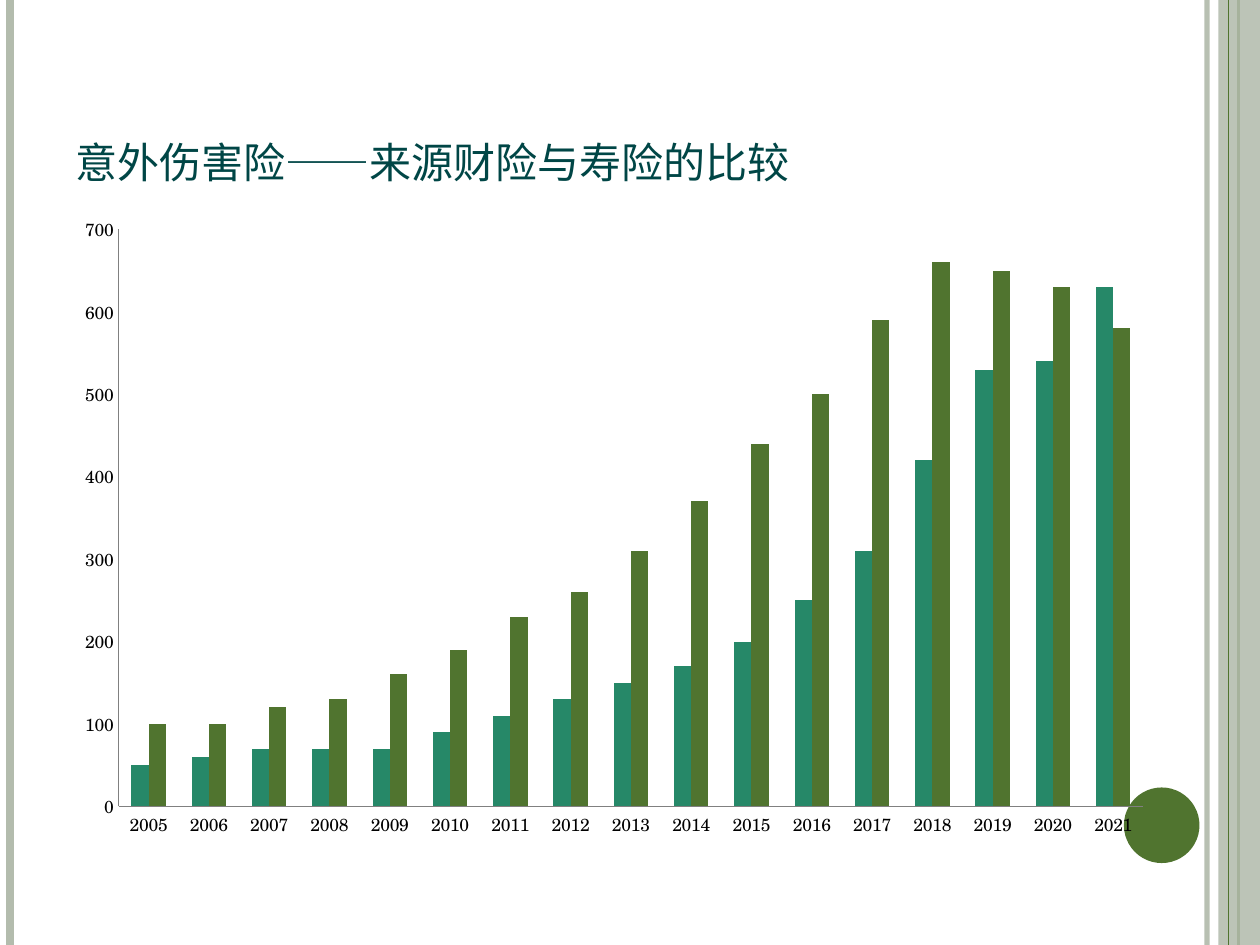
from dataclasses import dataclass

from lxml.etree import SubElement
from pptx import Presentation
from pptx.chart.data import CategoryChartData
from pptx.dml.color import RGBColor
from pptx.enum.chart import XL_CHART_TYPE, XL_TICK_MARK
from pptx.enum.shapes import MSO_CONNECTOR, MSO_SHAPE
from pptx.enum.text import MSO_ANCHOR
from pptx.oxml.ns import qn
from pptx.util import Inches, Pt

FONT = "TeX Gyre Schola"
SAGE, OLIVE, TEAL = "B3BCAD", "50742F", "268868"
TITLE_COLOR, TEXT_COLOR, AXIS_COLOR = "004646", "000000", "808080"
SLIDE_WIDTH, SLIDE_HEIGHT = 10, 7.5


@dataclass
class Stripe:
    x: float
    weight: float
    color: str
    opacity: int = 100


@dataclass
class Series:
    name: str
    color: str
    values: tuple[int, ...]


BACK_STRIPES = (
    Stripe(9.58, 3, SAGE, 93),
    Stripe(0.08, 4.5, SAGE),
    Stripe(9.83, 1.5, OLIVE),
)
FRONT_STRIPE = Stripe(9.75, 0.75, OLIVE)

YEARS = [str(year) for year in range(2005, 2022)]
PREMIUMS = (
    Series("Series 1", TEAL, (50, 60, 70, 70, 70, 90, 110, 130, 150, 170, 200,
                              250, 310, 420, 530, 540, 630)),
    Series("Series 2", OLIVE, (100, 100, 120, 130, 160, 190, 230, 260, 310, 370,
                               440, 500, 590, 660, 650, 630, 580)),
)


def paint(color_format, color: str) -> None:
    color_format.rgb = RGBColor.from_string(color)


def set_opacity(element, percent: int) -> None:
    """Make the first solid colour inside the element partly transparent."""
    if percent < 100:
        color = next(element.iter(qn("a:srgbClr")))
        SubElement(color, qn("a:alpha")).set("val", str(percent * 1000))


def draw_stripe(slide, stripe: Stripe) -> None:
    x = Inches(stripe.x)
    line = slide.shapes.add_connector(
        MSO_CONNECTOR.STRAIGHT, x, 0, x, Inches(SLIDE_HEIGHT))
    paint(line.line.color, stripe.color)
    line.line.width = Pt(stripe.weight)
    properties = line.line._get_or_add_ln().getparent()
    set_opacity(properties, stripe.opacity)
    SubElement(properties, qn("a:effectLst"))


def draw_shape(slide, preset: MSO_SHAPE, left: float, top: float, width: float,
               height: float, color: str, opacity: int = 100) -> None:
    shape = slide.shapes.add_shape(
        preset, Inches(left), Inches(top), Inches(width), Inches(height))
    shape.shadow.inherit = False
    shape.fill.solid()
    paint(shape.fill.fore_color, color)
    set_opacity(shape._element.spPr, opacity)
    shape.line.fill.background()


def draw_title(slide, text: str) -> None:
    frame = slide.shapes.add_textbox(
        Inches(0.5), Inches(0.3), Inches(8.17), Inches(1.25)).text_frame
    frame.word_wrap = True
    frame.vertical_anchor = MSO_ANCHOR.BOTTOM
    run = frame.paragraphs[0].add_run()
    run.text = text
    run.font.name = FONT
    run.font.size = Pt(30)
    paint(run.font.color, TITLE_COLOR)
    run._r.get_or_add_rPr().set("cap", "small")


def draw_chart(slide, years: list[str], premiums: tuple[Series, ...]) -> None:
    data = CategoryChartData()
    data.categories = years
    for series in premiums:
        data.add_series(series.name, series.values)
    chart = slide.shapes.add_chart(
        XL_CHART_TYPE.COLUMN_CLUSTERED, Inches(0.5), Inches(1.62),
        Inches(8.75), Inches(5.12), data).chart
    chart.has_title = False
    chart.has_legend = False
    chart.font.name = FONT
    chart.font.size = Pt(10)
    paint(chart.font.color, TEXT_COLOR)

    # Columns
    plot = chart.plots[0]
    plot.gap_width = 150
    plot.overlap = 0
    plot.vary_by_categories = False
    for column, series in zip(plot.series, premiums):
        column.format.fill.solid()
        paint(column.format.fill.fore_color, series.color)

    # Axes
    for axis in (chart.category_axis, chart.value_axis):
        axis.major_tick_mark = axis.minor_tick_mark = XL_TICK_MARK.NONE
        axis.has_major_gridlines = False
        axis.format.line.width = Pt(0.75)
        paint(axis.format.line.color, AXIS_COLOR)
    chart.value_axis.minimum_scale = 0
    chart.value_axis.maximum_scale = 700
    chart.value_axis.major_unit = 100


def main() -> None:
    presentation = Presentation()
    presentation.slide_width = Inches(SLIDE_WIDTH)
    presentation.slide_height = Inches(SLIDE_HEIGHT)
    slide = presentation.slides.add_slide(presentation.slide_layouts[6])

    # Side decoration
    for stripe in BACK_STRIPES:
        draw_stripe(slide, stripe)
    draw_shape(slide, MSO_SHAPE.RECTANGLE, 9.67, 0, 0.33, SLIDE_HEIGHT, SAGE, 87)
    draw_stripe(slide, FRONT_STRIPE)
    draw_shape(slide, MSO_SHAPE.OVAL, 8.92, 6.25, 0.6, 0.6, OLIVE)

    # Content
    draw_title(slide, "意外伤害险——来源财险与寿险的比较")
    draw_chart(slide, YEARS, PREMIUMS)

    presentation.save("out.pptx")


if __name__ == "__main__":
    main()
